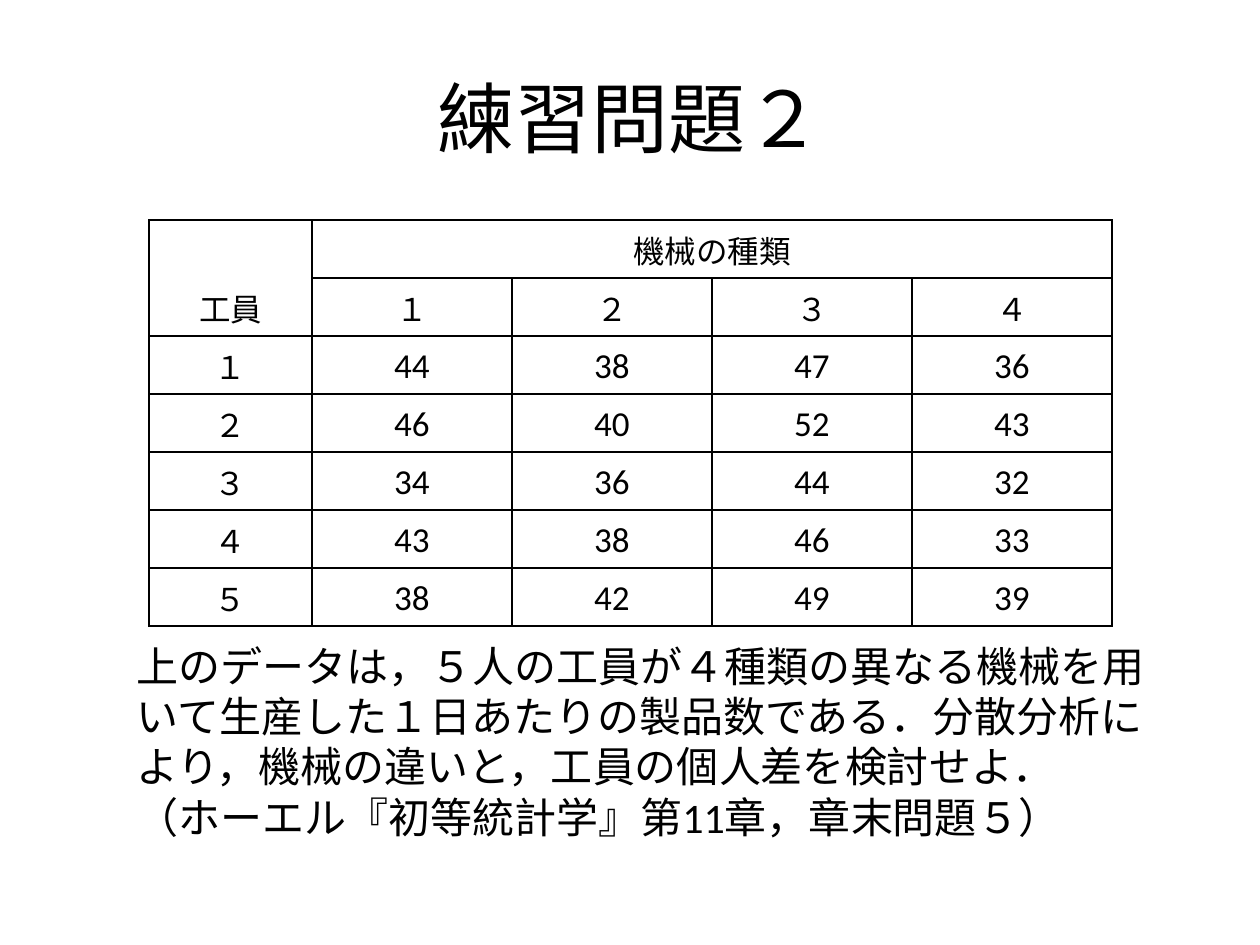
from lxml import etree
from pptx import Presentation
from pptx.dml.color import RGBColor
from pptx.enum.text import MSO_ANCHOR, PP_ALIGN
from pptx.oxml.ns import qn
from pptx.util import Pt

PX = 914400 / 126
FONT = "Calibri"
BLACK = "000000"
CENTER, LEFT = PP_ALIGN.CENTER, PP_ALIGN.LEFT
MIDDLE, BOTTOM, TOP = MSO_ANCHOR.MIDDLE, MSO_ANCHOR.BOTTOM, MSO_ANCHOR.TOP

MACHINES = ["１", "２", "３", "４"]
OUTPUT_BY_WORKER = {
    "１": [44, 38, 47, 36],
    "２": [46, 40, 52, 43],
    "３": [34, 36, 44, 32],
    "４": [43, 38, 46, 33],
    "５": [38, 42, 49, 39],
}
QUESTION = [
    "上のデータは，５人の工員が４種類の異なる機械を用いて生産した１日あたりの"
    "製品数である．分散分析により，機械の違いと，工員の個人差を検討せよ．",
    "（ホーエル『初等統計学』第11章，章末問題５）",
]


def px(length):
    return round(length * PX)


def color(hex_value):
    return RGBColor.from_string(hex_value)


def add_run(paragraph, text, size, align):
    paragraph.alignment = align
    run = paragraph.add_run()
    run.text = text
    run.font.size = Pt(size)
    run.font.name = FONT
    run.font.color.rgb = color(BLACK)
    # Same font for the Japanese characters
    east_asian = etree.SubElement(run.font._element, qn("a:ea"))
    east_asian.set("typeface", FONT)


def draw_borders(cell):
    properties = cell._tc.get_or_add_tcPr()
    for side in ("lnL", "lnR", "lnT", "lnB"):
        line = etree.SubElement(properties, qn(f"a:{side}"), w=str(Pt(1)))
        fill = etree.SubElement(line, qn("a:solidFill"))
        etree.SubElement(fill, qn("a:srgbClr"), val=BLACK)


def place_title(slide, left, top, width, height):
    title = slide.shapes.title
    title.left, title.top = px(left), px(top)
    title.width, title.height = px(width), px(height)
    title.text_frame.vertical_anchor = MIDDLE
    add_run(title.text_frame.paragraphs[0], "練習問題２", 44, CENTER)


def add_output_table(slide, left, top, label_width, machine_width, row_height):
    row_count = len(OUTPUT_BY_WORKER) + 2
    column_count = len(MACHINES) + 1
    width = label_width + machine_width * len(MACHINES)
    table = slide.shapes.add_table(
        row_count, column_count, px(left), px(top), px(width), px(row_height * row_count)
    ).table
    table.first_row = table.horz_banding = False
    for index, column in enumerate(table.columns):
        column.width = px(machine_width if index else label_width)
    for row in table.rows:
        row.height = px(row_height)

    for cell in table.iter_cells():
        draw_borders(cell)
        cell.fill.background()
        cell.vertical_anchor = BOTTOM

    # Merged headings: worker label and machine types
    table.cell(0, 0).merge(table.cell(1, 0))
    table.cell(0, 1).merge(table.cell(0, column_count - 1))

    def write(row, column, text, size=18):
        add_run(table.cell(row, column).text_frame.paragraphs[0], text, size, CENTER)

    write(0, 0, "工員")
    write(0, 1, "機械の種類")
    for column, machine in enumerate(MACHINES, 1):
        write(1, column, machine)
    for row, (worker, outputs) in enumerate(OUTPUT_BY_WORKER.items(), 2):
        write(row, 0, worker)
        for column, output in enumerate(outputs, 1):
            write(row, column, str(output), 20)


def add_question(slide, left, top, width, height):
    frame = slide.shapes.add_textbox(px(left), px(top), px(width), px(height)).text_frame
    frame.word_wrap = True
    frame.vertical_anchor = TOP
    for index, text in enumerate(QUESTION):
        paragraph = frame.add_paragraph() if index else frame.paragraphs[0]
        add_run(paragraph, text, 24, LEFT)


def main():
    presentation = Presentation()
    presentation.slide_width, presentation.slide_height = px(1260), px(945)
    slide = presentation.slides.add_slide(presentation.slide_layouts[5])
    place_title(slide, 63, 38, 1134, 158)
    add_output_table(slide, 149, 220, label_width=163, machine_width=200, row_height=58)
    add_question(slide, 124, 634, 1052, 217)
    presentation.save("out.pptx")


if __name__ == "__main__":
    main()
